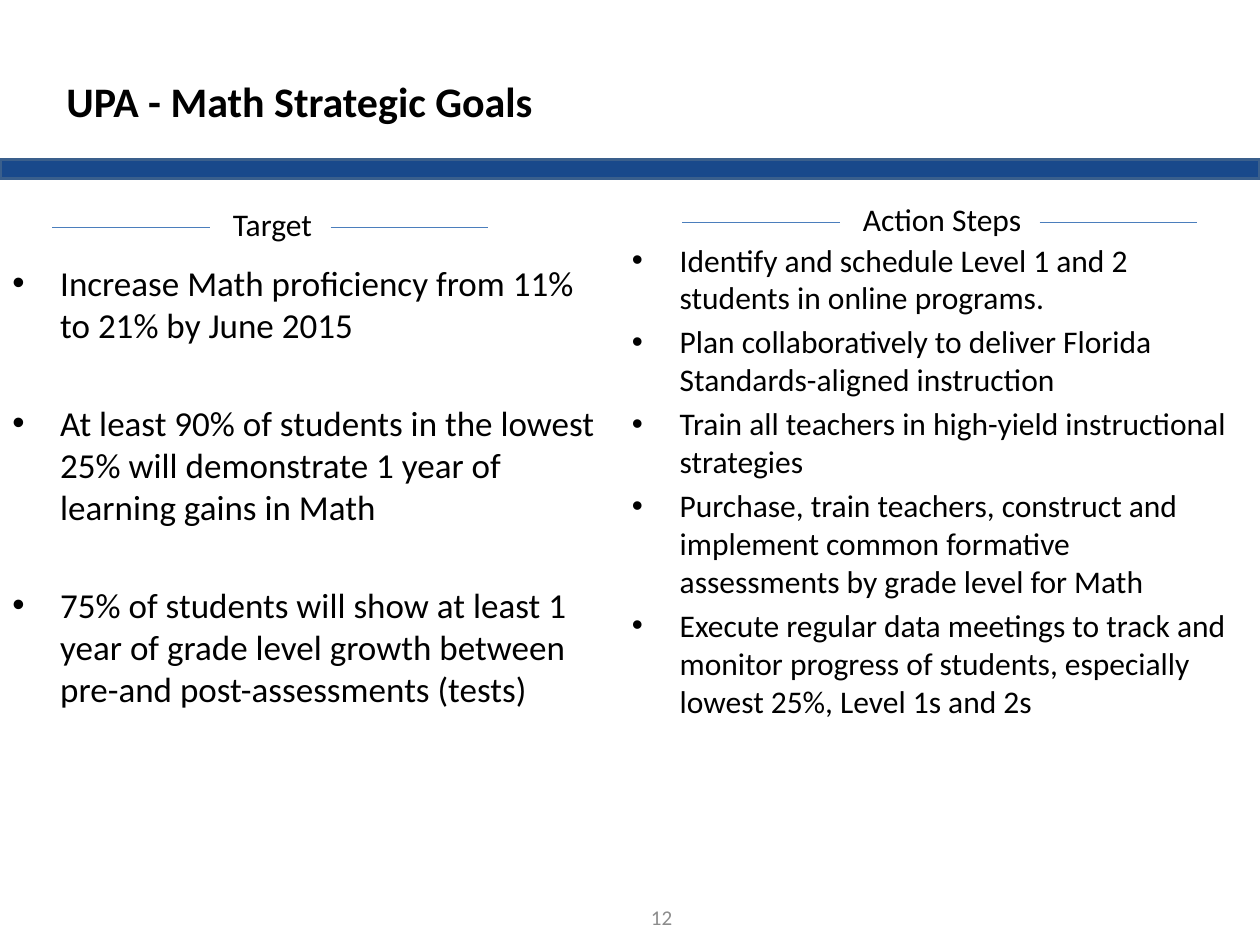
from lxml.etree import SubElement
from pptx import Presentation
from pptx.dml.color import RGBColor
from pptx.enum.shapes import MSO_CONNECTOR as Connector, MSO_SHAPE as Shape
from pptx.enum.text import MSO_ANCHOR as Anchor, PP_ALIGN as Align
from pptx.oxml.ns import qn
from pptx.util import Inches, Pt

COLORS = {"band": "19498B", "band_edge": "3A5F8C", "rule": "4B7EBC",
          "text": "000000", "number": "8C8C8C"}

presentation = Presentation()
presentation.slide_width, presentation.slide_height = Inches(10), Inches(7.5)
slide = presentation.slides.add_slide(presentation.slide_layouts[6])
COLUMN = presentation.slide_width / 24
ROW = presentation.slide_height / 100
INDENT = Inches(0.38)


def color(name):
    return RGBColor.from_string(COLORS[name])


def add_text(left, top, width, height, lines, size, ink="text", bold=False,
             align=Align.LEFT, anchor=Anchor.TOP, bullet_gap=None):
    """Add a text box in grid units; a bullet_gap in points makes a bullet list."""
    box = slide.shapes.add_textbox(int(left * COLUMN), int(top * ROW),
                                   int(width * COLUMN), int(height * ROW))
    frame = box.text_frame
    frame.word_wrap = True
    frame.vertical_anchor = anchor
    frame.text = "\n".join(lines)
    for index, paragraph in enumerate(frame.paragraphs):
        paragraph.alignment = align
        if bullet_gap is not None:
            paragraph.space_before = Pt(bullet_gap if index else 0)
            properties = paragraph._p.get_or_add_pPr()
            properties.set("marL", str(INDENT))
            properties.set("indent", str(-INDENT))
            SubElement(properties, qn("a:buFont"), typeface="Arial")
            SubElement(properties, qn("a:buChar"), char="•")
        paragraph.font.name = "Calibri"
        paragraph.font.size = Pt(size)
        paragraph.font.bold = bold
        paragraph.font.color.rgb = color(ink)


# Title, band and slide number
band = slide.shapes.add_shape(Shape.RECTANGLE, 0, int(16.9 * ROW),
                              presentation.slide_width, int(2 * ROW))
band.shadow.inherit = False
band.fill.solid()
band.fill.fore_color.rgb = color("band")
band.line.color.rgb = color("band_edge")
band.line.width = Pt(2)
add_text(1.03, 4.1, 21.94, 9.9, ["UPA - Math Strategic Goals"], 24, bold=True,
         anchor=Anchor.BOTTOM)
add_text(9.8, 94.4, 5.6, 5.3, ["12"], 12, ink="number", align=Align.CENTER,
         anchor=Anchor.MIDDLE)

# Bullet lists
targets = [
    "Increase Math proficiency from 11% to 21% by June 2015",
    "At least 90% of students in the lowest 25% will demonstrate 1 year of learning gains in Math",
    "75% of students will show at least 1 year of grade level growth between pre-and post-assessments (tests)",
]
action_steps = [
    "Identify and schedule Level 1 and 2 students in online programs.",
    "Plan collaboratively to deliver Florida Standards-aligned instruction",
    "Train all teachers in high-yield instructional strategies",
    "Purchase, train teachers, construct and implement common formative assessments by grade level for Math",
    "Execute regular data meetings to track and monitor progress of students, especially lowest 25%, Level 1s and 2s",
]
add_text(0, 27, 11.8, 69.6, targets, 20, bullet_gap=32)
add_text(11.8, 24.8, 11.8, 69.6, action_steps, 18, bullet_gap=3.6)

# Headings, each between two rules of three columns
RULE_LENGTH = 3
for heading, left, right, middle in [("Target", 1, 6.3, 24.05),
                                     ("Action Steps", 13, 19.8, 23.55)]:
    add_text(left + 3.2, middle - 3, 3.6, 5.3, [heading], 18)
    for start in (left, right):
        rule = slide.shapes.add_connector(
            Connector.STRAIGHT, int(start * COLUMN), int(middle * ROW),
            int((start + RULE_LENGTH) * COLUMN), int(middle * ROW))
        rule.line.color.rgb = color("rule")
        rule.line.width = Pt(0.75)
        SubElement(rule._element.spPr, qn("a:effectLst"))

presentation.save("out.pptx")
